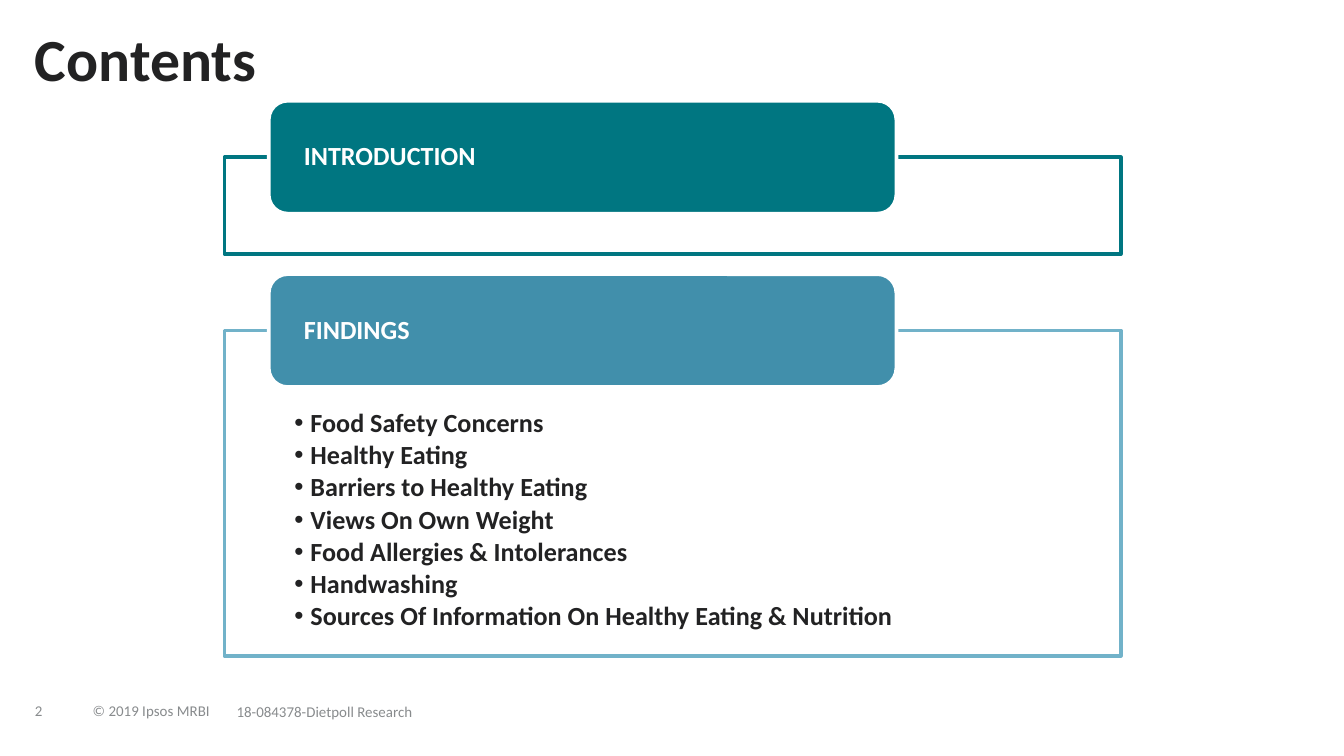
from dataclasses import dataclass
from typing import Optional

from lxml.etree import SubElement
from pptx import Presentation
from pptx.dml.color import RGBColor
from pptx.enum.shapes import MSO_SHAPE as Shape
from pptx.enum.text import MSO_ANCHOR as Anchor, PP_ALIGN as Align
from pptx.oxml.ns import qn
from pptx.util import Inches, Pt


@dataclass(frozen=True)
class Theme:
    font: str = "Calibri"
    bullet_font: str = "Arial"
    ink: str = "222223"
    grey: str = "888B8D"
    white: str = "FFFFFF"
    teal: str = "007681"
    blue: str = "418FAB"
    sky: str = "71B2C9"
    title: float = 32
    body: float = 14
    footer: float = 8
    border: float = 2
    panel_opacity: int = 90


@dataclass(frozen=True)
class Box:
    left: float
    top: float
    width: float
    height: float

    def emu(self) -> list:
        return [Inches(v) for v in (self.left, self.top, self.width, self.height)]


@dataclass(frozen=True)
class Style:
    size: float
    color: str
    bold: bool = False
    spacing: float = 0.9
    after: float = 0
    bullet: Optional[str] = None


@dataclass(frozen=True)
class Label:
    text: str
    box: Box
    style: Style
    anchor: Anchor
    wrap: bool = False


@dataclass(frozen=True)
class Section:
    heading: str
    top: float
    panel_height: float
    fill: str
    outline: str
    items: tuple = ()


THEME = Theme()
TITLE = Style(THEME.title, THEME.ink, True)
FOOTER = Style(THEME.footer, THEME.grey, spacing=0.85)
HEADING = Style(THEME.body, THEME.white, True)
ITEM = Style(THEME.body, THEME.ink, True, after=2.1, bullet="•")

SLIDE_WIDTH = Inches(10)
SLIDE_HEIGHT = SLIDE_WIDTH * 9 // 16
PANEL_LEFT, PANEL_WIDTH = 1.67, 6.67
HEADING_LEFT, HEADING_WIDTH, HEADING_HEIGHT = 2, 4.67, 0.84
INDENT = 0.12

LABELS = (
    Label("2", Box(0.26, 5.17, 0.34, 0.26), FOOTER, Anchor.MIDDLE),
    Label("© 2019 Ipsos MRBI", Box(0.69, 5.21, 0.9, 0.18), FOOTER, Anchor.MIDDLE),
    Label("18-084378-Dietpoll Research", Box(1.76, 5.15, 2.72, 0.31), FOOTER, Anchor.MIDDLE),
    Label("Contents", Box(0.26, 0.22, 7.44, 0.48), TITLE, Anchor.TOP, True),
)

SECTIONS = (
    Section("INTRODUCTION", 0.75, 0.72, THEME.teal, THEME.teal),
    Section("FINDINGS", 2.04, 2.42, THEME.blue, THEME.sky, (
        "Food Safety Concerns",
        "Healthy Eating",
        "Barriers to Healthy Eating",
        "Views On Own Weight",
        "Food Allergies & Intolerances",
        "Handwashing",
        "Sources Of Information On Healthy Eating & Nutrition",
    )),
)


def apply(target, values: dict) -> None:
    for name, value in values.items():
        setattr(target, name, value)


def add_bullet(p, char: str) -> None:
    pPr = p._p.get_or_add_pPr()
    pPr.set("marL", str(Inches(INDENT)))
    pPr.set("indent", str(-Inches(INDENT)))
    SubElement(pPr, qn("a:buFont")).set("typeface", THEME.bullet_font)
    SubElement(pPr, qn("a:buChar")).set("char", char)


def write(sp, lines: tuple, style: Style, anchor: Anchor,
          insets: tuple = (0, 0, 0, 0), wrap: bool = True) -> None:
    tf = sp.text_frame
    margins = ("margin_left", "margin_top", "margin_right", "margin_bottom")
    apply(tf, dict(zip(margins, map(Inches, insets))))
    apply(tf, {"word_wrap": wrap, "vertical_anchor": anchor})
    for i, line in enumerate(lines):
        p = tf.paragraphs[0] if i == 0 else tf.add_paragraph()
        if style.bullet:
            p.level = 1
            add_bullet(p, style.bullet)
        apply(p, {"alignment": Align.LEFT, "line_spacing": style.spacing,
                  "space_before": Pt(0), "space_after": Pt(style.after)})
        r = p.add_run()
        r.text = line
        apply(r.font, {"name": THEME.font, "size": Pt(style.size), "bold": style.bold})
        r.font.color.rgb = RGBColor.from_string(style.color)


def add_block(slide, kind: Shape, box: Box, fill: str, outline: str):
    sp = slide.shapes.add_shape(kind, *box.emu())
    sp.shadow.inherit = False
    sp.fill.solid()
    sp.fill.fore_color.rgb = RGBColor.from_string(fill)
    sp.line.color.rgb = RGBColor.from_string(outline)
    sp.line.width = Pt(THEME.border)
    return sp


def set_opacity(sp, percent: int) -> None:
    color = sp._element.spPr.find(qn("a:solidFill"))[0]
    SubElement(color, qn("a:alpha")).set("val", str(percent * 1000))


def draw_label(slide, label: Label) -> None:
    sp = slide.shapes.add_textbox(*label.box.emu())
    write(sp, (label.text,), label.style, label.anchor, wrap=label.wrap)


def draw_section(slide, section: Section) -> None:
    panel_top = section.top + HEADING_HEIGHT / 2
    panel_box = Box(PANEL_LEFT, panel_top, PANEL_WIDTH, section.panel_height)
    panel = add_block(slide, Shape.RECTANGLE, panel_box, THEME.white, section.outline)
    set_opacity(panel, THEME.panel_opacity)
    if section.items:
        write(panel, section.items, ITEM, Anchor.TOP, (0.52, 0.59, 0.52, 0.11))
    heading_box = Box(HEADING_LEFT, section.top, HEADING_WIDTH, HEADING_HEIGHT)
    heading = add_block(slide, Shape.ROUNDED_RECTANGLE, heading_box, section.fill, THEME.white)
    write(heading, (section.heading,), HEADING, Anchor.MIDDLE, (0.22, 0, 0.22, 0))


def main() -> None:
    prs = Presentation()
    apply(prs, {"slide_width": SLIDE_WIDTH, "slide_height": SLIDE_HEIGHT})
    slide = prs.slides.add_slide(prs.slide_layouts[6])
    for label in LABELS:
        draw_label(slide, label)
    for section in SECTIONS:
        draw_section(slide, section)
    prs.save("out.pptx")


if __name__ == "__main__":
    main()
